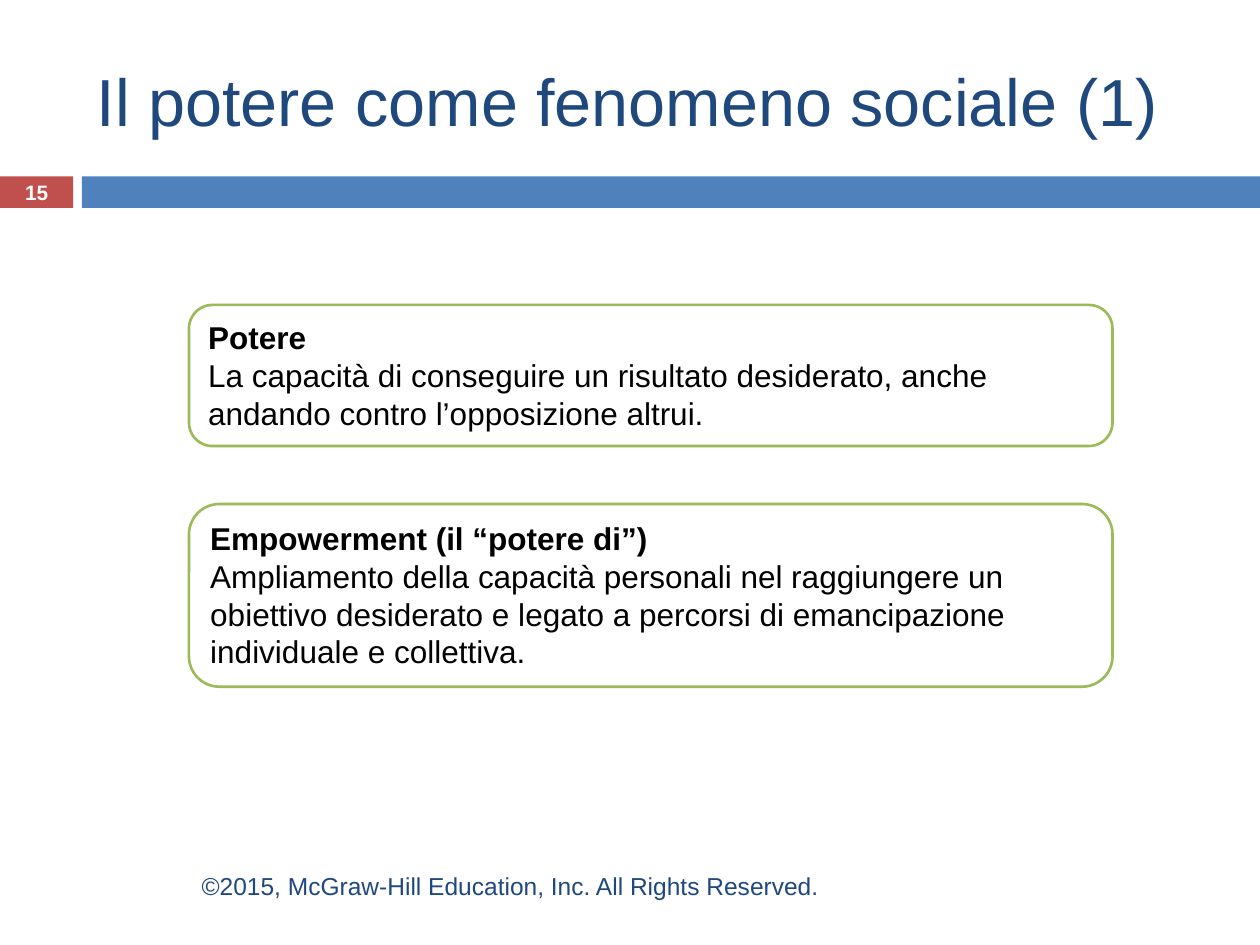
from typing import NamedTuple

from pptx import Presentation
from pptx.dml.color import RGBColor
from pptx.enum.shapes import MSO_SHAPE
from pptx.enum.text import MSO_ANCHOR, PP_ALIGN
from pptx.util import Inches, Pt

RECTANGLE = MSO_SHAPE.RECTANGLE
ROUNDED = MSO_SHAPE.ROUNDED_RECTANGLE
TOP, MIDDLE = MSO_ANCHOR.TOP, MSO_ANCHOR.MIDDLE
LEFT, CENTER, RIGHT = PP_ALIGN.LEFT, PP_ALIGN.CENTER, PP_ALIGN.RIGHT

FONT = "Arial"
COLORS = {
    "navy": "1F497D",
    "blue": "4F81BD",
    "red": "C0504D",
    "green": "9BBB59",
    "white": "FFFFFF",
    "black": "000000",
}


class Area(NamedTuple):
    left: float
    top: float
    width: float
    height: float


class Definition(NamedTuple):
    term: str
    meaning: str
    area: Area


DEFINITIONS = [
    Definition(
        "Potere",
        "La capacità di conseguire un risultato desiderato, anche "
        "andando contro l’opposizione altrui.",
        Area(1.5, 2.42, 7.33, 1.12),
    ),
    Definition(
        "Empowerment (il “potere di”)",
        "Ampliamento della capacità personali nel raggiungere un obiettivo "
        "desiderato e legato a percorsi di emancipazione individuale e collettiva.",
        Area(1.5, 4, 7.33, 1.45),
    ),
]


def color(name: str) -> RGBColor:
    return RGBColor.from_string(COLORS[name])


def write(para, text: str, *, size: float, ink: str, bold: bool = False, align=LEFT) -> None:
    """Add formatted text to a paragraph."""
    para.alignment = align
    span = para.add_run()
    span.text = text
    span.font.name = FONT
    span.font.size = Pt(size)
    span.font.bold = bold
    span.font.color.rgb = color(ink)


def add_box(page, kind, area: Area, fill: str, line: str | None = None):
    """Add a filled shape, outlined only when a line colour is given."""
    box = page.shapes.add_shape(kind, *map(Inches, area))
    box.shadow.inherit = False
    box.fill.solid()
    box.fill.fore_color.rgb = color(fill)
    if line:
        box.line.color.rgb = color(line)
        box.line.width = Pt(1.5)
    else:
        box.line.fill.background()
    return box


def add_label(page, area: Area, text: str, **style) -> None:
    """Add one vertically centred line of text."""
    frame = page.shapes.add_textbox(*map(Inches, area)).text_frame
    frame.word_wrap = True
    frame.vertical_anchor = MIDDLE
    write(frame.paragraphs[0], text, **style)


def add_definition(page, definition: Definition) -> None:
    """Add a rounded box with a bold term above its meaning."""
    frame = add_box(page, ROUNDED, definition.area, "white", "green").text_frame
    frame.word_wrap = True
    frame.vertical_anchor = TOP
    write(frame.paragraphs[0], definition.term, size=18, ink="black", bold=True)
    write(frame.add_paragraph(), definition.meaning, size=18, ink="black")


def main() -> None:
    deck = Presentation()
    deck.slide_width, deck.slide_height = Inches(10), Inches(7.5)
    page = deck.slides.add_slide(deck.slide_layouts[6])

    # Band under the title
    add_box(page, RECTANGLE, Area(0, 1.4, 0.58, 0.25), "red")
    add_box(page, RECTANGLE, Area(0.65, 1.4, 9.35, 0.25), "blue")

    # Title and page number
    add_label(page, Area(0.67, 0.25, 8.92, 1.08),
              "Il potere come fenomeno sociale (1)", size=38, ink="navy")
    add_label(page, Area(0, 1.39, 0.58, 0.27), "15",
              size=11.9, ink="white", bold=True, align=CENTER)

    # Definitions
    for definition in DEFINITIONS:
        add_definition(page, definition)

    # Footer
    add_label(page, Area(0.67, 6.83, 5.93, 0.4),
              "©2015, McGraw-Hill Education, Inc. All Rights Reserved.",
              size=14, ink="navy", align=RIGHT)

    deck.save("out.pptx")


if __name__ == "__main__":
    main()
